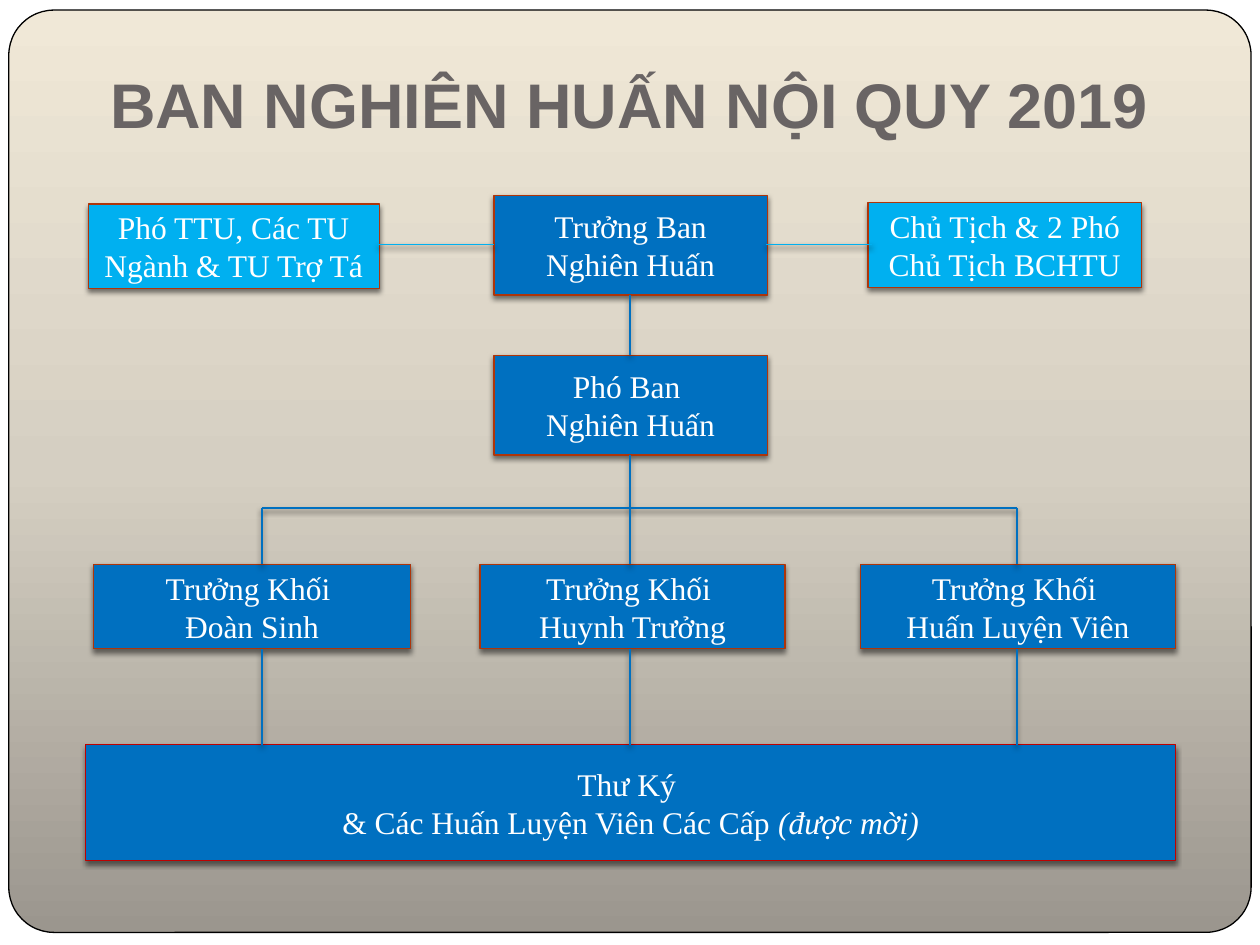
from dataclasses import dataclass

from pptx import Presentation
from pptx.dml.color import RGBColor
from pptx.enum.shapes import MSO_CONNECTOR, MSO_SHAPE
from pptx.enum.text import MSO_ANCHOR, PP_ALIGN
from pptx.oxml import parse_xml
from pptx.oxml.ns import nsdecls
from pptx.util import Inches, Pt

PROCESS = MSO_SHAPE.FLOWCHART_PROCESS
ROUNDED = MSO_SHAPE.ROUNDED_RECTANGLE
STRAIGHT = MSO_CONNECTOR.STRAIGHT
CENTER = PP_ALIGN.CENTER
MIDDLE = MSO_ANCHOR.MIDDLE
BOTTOM = MSO_ANCHOR.BOTTOM


@dataclass(frozen=True)
class Theme:
    """Colours, fonts and sizes of the organisation chart."""
    page: str = "FFFFFF"
    frame: str = "000000"
    gradient: tuple = ((0, "9B968E"), (50, "D5CFC2"), (100, "F0E8D7"))
    title: str = "696464"
    text: str = "FFFFFF"
    main: str = "0070C0"
    adviser: str = "00B0F0"
    border: str = "AE350A"
    base_border: str = "C00000"
    title_font: str = "Arial"
    body_font: str = "Times New Roman"
    title_size: int = 36
    body_size: int = 18
    border_width: float = 0.75
    link_width: float = 1


THEME = Theme()


def color(value):
    """Turn a hex string into a colour."""
    return RGBColor.from_string(value)


def set_line(line, value, width):
    """Set the colour and width of a line."""
    line.color.rgb = color(value)
    line.width = Pt(width)


def add_shadow(shape):
    """Give a shape or connector a soft shadow below it."""
    shape._element.spPr.append(parse_xml(
        f'<a:effectLst {nsdecls("a")}>'
        f'<a:outerShdw blurRad="{Pt(3)}" dist="{Pt(2)}" dir="5400000" rotWithShape="0">'
        '<a:srgbClr val="000000"><a:alpha val="50000"/></a:srgbClr>'
        '</a:outerShdw></a:effectLst>'))


def add_panel(slide):
    """Add the rounded panel with its vertical gradient."""
    panel = slide.shapes.add_shape(
        ROUNDED, Inches(0.07), Inches(0.08), Inches(9.86), Inches(7.32))
    panel.adjustments[0] = 0.049
    stops = "".join(
        f'<a:gs pos="{position * 1000}"><a:srgbClr val="{value}"/></a:gs>'
        for position, value in THEME.gradient)
    panel._element.spPr.insert(2, parse_xml(
        f'<a:gradFill {nsdecls("a")}><a:gsLst>{stops}</a:gsLst>'
        '<a:lin ang="16200000" scaled="0"/></a:gradFill>'))
    set_line(panel.line, THEME.frame, THEME.border_width)
    panel.shadow.inherit = False


def style_paragraph(paragraph, font_name, size, value):
    """Centre a paragraph and set its font."""
    paragraph.alignment = CENTER
    paragraph.font.name = font_name
    paragraph.font.size = Pt(size)
    paragraph.font.color.rgb = color(value)


def add_title(slide, text):
    """Add the slide title."""
    box = slide.shapes.add_textbox(
        Inches(0.08), Inches(0.25), Inches(9.83), Inches(0.97))
    frame = box.text_frame
    frame.word_wrap = True
    frame.vertical_anchor = BOTTOM
    frame.margin_bottom = Inches(0.1)
    paragraph = frame.paragraphs[0]
    paragraph.text = text
    style_paragraph(paragraph, THEME.title_font, THEME.title_size, THEME.title)
    paragraph.font.bold = True


def add_box(slide, bounds, text, fill=THEME.main, border=THEME.border):
    """Add a chart box and return its last paragraph."""
    shape = slide.shapes.add_shape(PROCESS, *map(Inches, bounds))
    shape.fill.solid()
    shape.fill.fore_color.rgb = color(fill)
    set_line(shape.line, border, THEME.border_width)
    add_shadow(shape)
    frame = shape.text_frame
    frame.word_wrap = True
    frame.vertical_anchor = MIDDLE
    frame.text = text
    for paragraph in frame.paragraphs:
        style_paragraph(paragraph, THEME.body_font, THEME.body_size, THEME.text)
    return frame.paragraphs[-1]


def add_link(slide, start, end, value=THEME.main):
    """Add a straight link between two points."""
    link = slide.shapes.add_connector(STRAIGHT, *map(Inches, (*start, *end)))
    set_line(link.line, value, THEME.link_width)
    add_shadow(link)


def main():
    """Build and save the organisation chart."""
    presentation = Presentation()
    presentation.slide_width = Inches(10)
    presentation.slide_height = Inches(7.5)
    slide = presentation.slides.add_slide(presentation.slide_layouts[6])
    slide.background.fill.solid()
    slide.background.fill.fore_color.rgb = color(THEME.page)
    add_panel(slide)
    add_title(slide, "BAN NGHIÊN HUẤN NỘI QUY 2019")

    add_box(slide, (3.92, 1.55, 2.17, 0.79), "Trưởng Ban Nghiên Huấn")
    add_box(slide, (3.92, 2.82, 2.17, 0.79), "Phó Ban \nNghiên Huấn")
    add_box(slide, (0.7, 1.62, 2.31, 0.67),
            "Phó TTU, Các TU Ngành & TU Trợ Tá", THEME.adviser)
    add_box(slide, (6.89, 1.61, 2.17, 0.67),
            "Chủ Tịch & 2 Phó Chủ Tịch BCHTU", THEME.adviser)
    for left, width, name in ((0.74, 2.52, "Đoàn Sinh"),
                              (3.81, 2.42, "Huynh Trưởng"),
                              (6.83, 2.5, "Huấn Luyện Viên")):
        add_box(slide, (left, 4.48, width, 0.67), f"Trưởng Khối \n{name}")
    secretary = add_box(slide, (0.68, 5.91, 8.65, 0.92),
                        "Thư Ký \v& Các Huấn Luyện Viên Các Cấp ",
                        border=THEME.base_border)
    invited = secretary.add_run()
    invited.text = "(được mời)"
    invited.font.italic = True

    for left, right in ((3, 3.92), (6.08, 6.92)):
        add_link(slide, (left, 1.94), (right, 1.94), THEME.adviser)
    add_link(slide, (5, 2.34), (5, 2.82))
    add_link(slide, (5, 3.61), (5, 4.03))
    add_link(slide, (2.08, 4.03), (8.07, 4.03))
    for center in (2.08, 5, 8.07):
        add_link(slide, (center, 4.03), (center, 4.48))
        add_link(slide, (center, 5.15), (center, 5.91))

    presentation.save("out.pptx")


if __name__ == "__main__":
    main()
